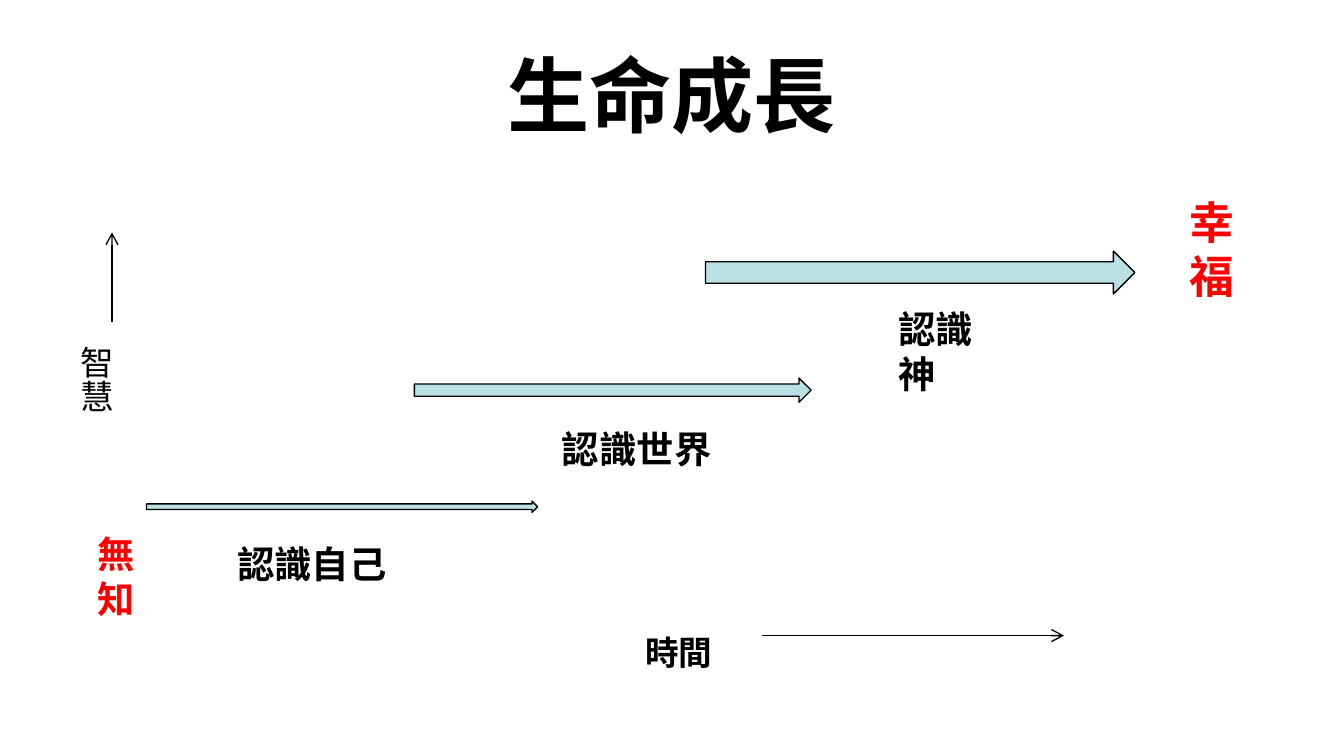
from pptx import Presentation
from pptx.dml.color import RGBColor
from pptx.enum.shapes import MSO_CONNECTOR as Connector, MSO_SHAPE as Preset
from pptx.enum.text import MSO_ANCHOR as Anchor, MSO_AUTO_SIZE as AutoSize, PP_ALIGN as Align
from pptx.oxml.ns import qn
from pptx.util import Pt
from lxml.etree import SubElement


def color(value):
    return RGBColor.from_string(value)


class SlideBuilder:
    FONT = "Noto Sans CJK TC"
    BLACK, RED, FILL = "000000", "FF0000", "BBE0E3"
    LINE_WIDTH = 0.75

    def __init__(self, slide):
        self.slide = slide

    def apply(self, target, values):
        for name, value in values.items():
            setattr(target, name, value)

    def fill_text(self, frame, lines, size, ink, bold=True, align=None):
        frame.text = "\n".join(lines)
        for paragraph in frame.paragraphs:
            if align is not None:
                paragraph.alignment = align
            font = paragraph.runs[0].font
            self.apply(font, {"name": self.FONT, "size": Pt(size), "bold": bold})
            font.color.rgb = color(ink)
            east_asian = SubElement(font._element, qn("a:ea"))
            east_asian.set("typeface", self.FONT)

    def place(self, shape, box):
        names = ("left", "top", "width", "height")
        self.apply(shape, dict(zip(names, map(Pt, box))))

    def stroke(self, line):
        line.color.rgb = color(self.BLACK)
        line.width = Pt(self.LINE_WIDTH)

    def title(self, text, box, size):
        shape = self.slide.shapes.title
        self.place(shape, box)
        shape.text_frame.vertical_anchor = Anchor.MIDDLE
        self.fill_text(shape.text_frame, [text], size, self.BLACK, align=Align.CENTER)

    def label(self, lines, box, size, ink=BLACK, bold=True, wrap=False, vertical=False):
        frame = self.slide.shapes.add_textbox(*map(Pt, box)).text_frame
        self.apply(frame, {"word_wrap": wrap, "auto_size": AutoSize.SHAPE_TO_FIT_TEXT})
        if vertical:
            frame._txBody.bodyPr.set("vert", "eaVert")
        self.fill_text(frame, lines, size, ink, bold)

    def block_arrow(self, box):
        shape = self.slide.shapes.add_shape(Preset.RIGHT_ARROW, *map(Pt, box))
        shape.shadow.inherit = False
        shape.fill.solid()
        shape.fill.fore_color.rgb = color(self.FILL)
        self.stroke(shape.line)

    def axis(self, start, end):
        connector = self.slide.shapes.add_connector(
            Connector.STRAIGHT, *map(Pt, start + end))
        self.stroke(connector.line)
        SubElement(connector.line._get_or_add_ln(), qn("a:tailEnd")).set("type", "arrow")
        SubElement(connector._element.spPr, qn("a:effectLst"))


def main():
    presentation = Presentation()
    presentation.slide_width, presentation.slide_height = Pt(720), Pt(405)
    slide = presentation.slides.add_slide(presentation.slide_layouts[5])
    builder = SlideBuilder(slide)

    builder.title("生命成長", (36, 16.5, 648, 67.5), 44)

    stages = (
        ("認識自己", (78.5, 268.5, 209.5, 6), (120, 286.5, 94.5, 31.5)),
        ("認識世界", (222, 202.5, 212.5, 13), (294, 224.5, 94.5, 31.5)),
        ("認識神", (378, 134.5, 230, 23), (474, 160.5, 74, 31.5)),
    )
    for text, arrow_box, label_box in stages:
        builder.block_arrow(arrow_box)
        builder.label([text], label_box, 20)

    builder.label(["無", "知"], (45, 281, 34, 55.5), 20, builder.RED, wrap=True)
    builder.label(["幸福"], (630, 101, 49, 65.5), 24, builder.RED, wrap=True)

    builder.axis((408, 340.5), (570, 340.5))
    builder.axis((60, 172.5), (60, 124.5))
    builder.label(["時間"], (338.5, 335, 50.5, 29), 18)
    builder.label(["智慧"], (30, 178.5, 36, 43), 18, bold=False, vertical=True)

    presentation.save("out.pptx")


if __name__ == "__main__":
    main()
